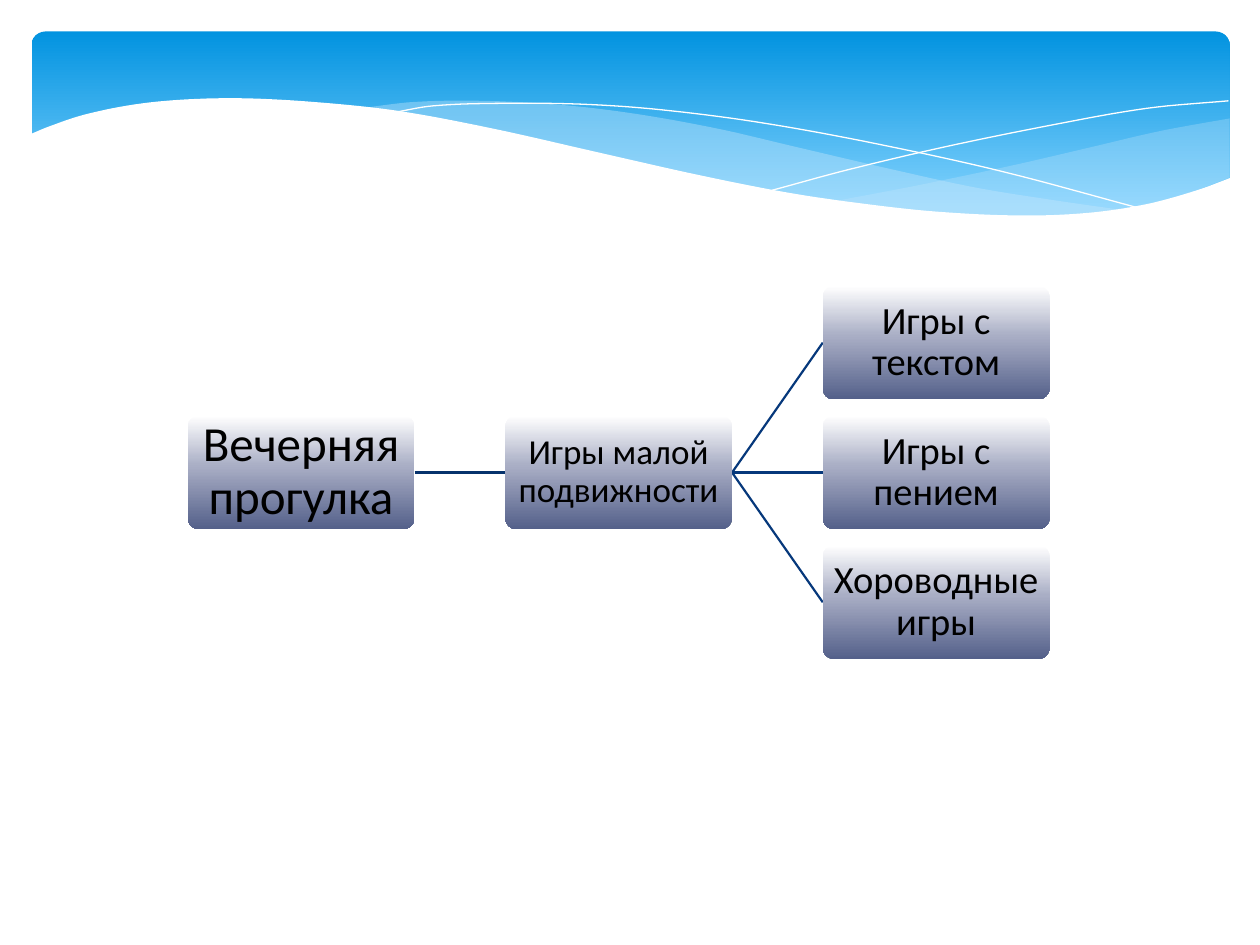
from lxml import etree
from pptx import Presentation
from pptx.dml.color import RGBColor
from pptx.enum.shapes import MSO_CONNECTOR, MSO_SHAPE
from pptx.enum.text import MSO_ANCHOR, PP_ALIGN
from pptx.oxml.ns import qn
from pptx.util import Inches, Pt

ROUNDED = MSO_SHAPE.ROUNDED_RECTANGLE
STRAIGHT = MSO_CONNECTOR.STRAIGHT
MIDDLE = MSO_ANCHOR.MIDDLE
CENTER = PP_ALIGN.CENTER

COLUMNS, ROWS = 100, 75
SKY = [(0, "0293E0"), (90, "83D3FE")]
SLATE = [(0, "FFFFFF"), (44, "A9AEC5"), (100, "54608A")]


def rgb(value):
    return RGBColor.from_string(value)


def write(tf, text, size=22, color="000000", font="Calibri", inset=0.04):
    tf.word_wrap = True
    tf.vertical_anchor = MIDDLE
    tf.margin_left = tf.margin_right = Inches(inset)
    tf.margin_top = tf.margin_bottom = Inches(inset)
    p = tf.paragraphs[0]
    p.alignment = CENTER
    p.line_spacing = 0.9
    r = p.add_run()
    r.text = text
    r.font.size = Pt(size)
    r.font.name = font
    r.font.color.rgb = rgb(color)


def curve(knots, steps=8):
    last = len(knots) - 1
    slopes = []
    for i in range(last + 1):
        (x0, y0), (x1, y1) = knots[max(i - 1, 0)], knots[min(i + 1, last)]
        slopes.append((y1 - y0) / (x1 - x0))
    points = [knots[0]]
    for i in range(last):
        (x0, y0), (x1, y1) = knots[i], knots[i + 1]
        width = x1 - x0
        for step in range(1, steps + 1):
            t = step / steps
            ease = t * t * (3 - 2 * t)
            bend = t * (1 - t) * ((1 - t) * slopes[i] - t * slopes[i + 1])
            points.append((x0 + width * t, y0 + (y1 - y0) * ease + width * bend))
    return points


class Board:
    def __init__(self, prs):
        self.slide = prs.slides.add_slide(prs.slide_layouts[6])
        self.column = prs.slide_width / COLUMNS
        self.row = prs.slide_height / ROWS

    def place(self, x, y):
        return round(x * self.column), round(y * self.row)

    def panel(self, x, y, width, height, stops, corner):
        s = self.slide.shapes.add_shape(
            ROUNDED, *self.place(x, y), *self.place(width, height))
        s.shadow.inherit = False
        s.adjustments[0] = corner
        s.line.fill.background()
        s.fill.gradient()
        s.fill.gradient_angle = 270
        stop_list = s._element.spPr.find(qn("a:gradFill")).find(qn("a:gsLst"))
        for stop in list(stop_list):
            stop_list.remove(stop)
        for position, color in stops:
            stop = etree.SubElement(stop_list, qn("a:gs"), pos=str(position * 1000))
            etree.SubElement(stop, qn("a:srgbClr"), val=color)
        return s

    def outline(self, points, closed):
        start, *rest = [self.place(*point) for point in points]
        builder = self.slide.shapes.build_freeform(*start)
        builder.add_line_segments(rest, close=closed)
        s = builder.convert_to_shape()
        s.shadow.inherit = False
        return s

    def wave(self, upper, lower, color="C6E7FC", alpha=100):
        s = self.outline(curve(upper) + curve(lower)[::-1], True)
        s.line.fill.background()
        s.fill.solid()
        s.fill.fore_color.rgb = rgb(color)
        if alpha < 100:
            fill = s._element.spPr.find(qn("a:solidFill"))
            etree.SubElement(fill[0], qn("a:alpha"), val=str(alpha * 1000))

    def thread(self, knots, color="FFFFFF"):
        s = self.outline(curve(knots), False)
        s.fill.background()
        s.line.color.rgb = rgb(color)
        s.line.width = Pt(0)

    def box(self, x, y, text, size):
        s = self.panel(x, y, BOX_W, BOX_H, SLATE, 0.1)
        write(s.text_frame, text, size=size)

    def link(self, x1, y1, x2, y2, color="06387B"):
        line = self.slide.shapes.add_connector(
            STRAIGHT, *self.place(x1, y1), *self.place(x2, y2))
        line.line.color.rgb = rgb(color)
        line.line.width = Pt(1.25)
        etree.SubElement(line._element.spPr, qn("a:effectLst"))


BOX_W, BOX_H = 18, 9
LEFT, MIDDLE_ROW = 14.9, 33
COLUMN_STEP, ROW_STEP = 25.2, 10.3
NODES = [
    (0, 0, "Вечерняя прогулка", 28),
    (1, 0, "Игры малой подвижности", 20),
    (2, -1, "Игры с текстом", 22),
    (2, 0, "Игры с пением", 22),
    (2, 1, "Хороводные игры", 22),
]
LINKS = [(0, 0, "06326C"), (1, -1, "06387B"), (1, 0, "06387B"), (1, 1, "06387B")]


def draw_header(board):
    board.panel(2.5, 2.5, 95.1, 15.6, SKY, 0.071)
    board.wave(
        [(66.1, 16), (72.9, 14.7), (80.5, 13.1), (86.1, 11.8), (92.1, 10.4), (97.6, 9.4)],
        [(66.1, 16), (71.9, 16.7), (78.1, 17.2), (83.5, 17.2), (88.9, 16.6),
         (93.5, 15.6), (97.6, 14.1)], alpha=29)
    board.wave(
        [(28.6, 8.6), (32.8, 8.1), (38, 8), (44.2, 8.3), (50.2, 9), (56.9, 10.2),
         (62.9, 11.6), (70.6, 13.4), (77.5, 14.9), (83.7, 15.9), (89.3, 16.7)],
        [(28.6, 8.6), (34.2, 9.4), (40.4, 10.6), (44.9, 11.6), (53, 13.5), (60.1, 15),
         (66.5, 16.1), (72.2, 16.8), (78.5, 17.2), (83.8, 17.2), (89.3, 16.7)], alpha=40)
    board.thread(
        [(30.9, 9), (34.4, 8.4), (40.1, 8.2), (46.9, 8.3), (53.3, 8.8), (60.8, 9.8),
         (69.5, 11.4), (79.5, 13.6), (90.7, 16.6)])
    board.thread(
        [(61.3, 15.1), (67.2, 13.5), (74.8, 11.7), (83.6, 9.9), (91, 8.6), (97.5, 8)])
    board.wave(
        [(2.3, 10.7), (4, 10), (6.7, 9.1), (10.6, 8.3), (14.6, 7.9), (19.3, 7.8),
         (25, 8.1), (31.6, 8.8), (39.1, 10.2), (47.5, 12.1), (55.5, 13.9),
         (62.6, 15.3), (68.8, 16.2), (74.4, 16.8), (80.9, 17.1), (86.3, 16.9),
         (91, 16.2), (95, 15.1), (97.7, 14.1)],
        [(2.3, 22.4), (97.7, 22.4)], color="FFFFFF")


def draw_tree(board):
    middle = MIDDLE_ROW + BOX_H / 2
    for column, row, color in LINKS:
        x = LEFT + column * COLUMN_STEP
        board.link(x + BOX_W, middle, x + COLUMN_STEP, middle + row * ROW_STEP, color)
    for column, row, text, size in NODES:
        board.box(LEFT + column * COLUMN_STEP, MIDDLE_ROW + row * ROW_STEP, text, size)


def main():
    prs = Presentation()
    prs.slide_width, prs.slide_height = Inches(10), Inches(7.5)
    board = Board(prs)
    draw_header(board)
    draw_tree(board)
    prs.save("out.pptx")


if __name__ == "__main__":
    main()
